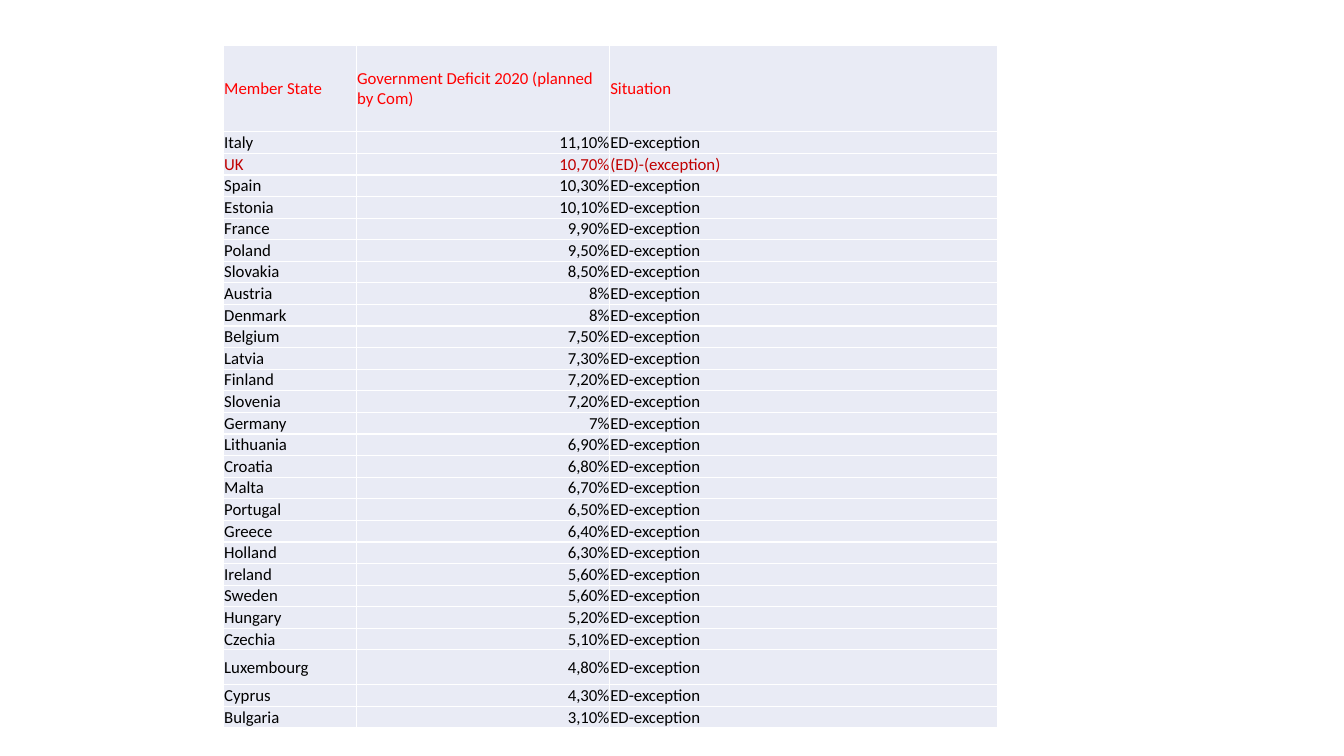
"""Build a slide with a table of planned government deficits in 2020."""
import pptx
import pptx.dml.color
import pptx.enum.text
import pptx.oxml
import pptx.oxml.ns
import pptx.util

Cm = pptx.util.Cm
ALIGN = pptx.enum.text.PP_ALIGN

HEADER = ("Member State", "Government Deficit 2020 (planned by Com)", "Situation")
DEFICITS = [
    ("Italy", "11,10%"), ("UK", "10,70%"), ("Spain", "10,30%"),
    ("Estonia", "10,10%"), ("France", "9,90%"), ("Poland", "9,50%"),
    ("Slovakia", "8,50%"), ("Austria", "8%"), ("Denmark", "8%"),
    ("Belgium", "7,50%"), ("Latvia", "7,30%"), ("Finland", "7,20%"),
    ("Slovenia", "7,20%"), ("Germany", "7%"), ("Lithuania", "6,90%"),
    ("Croatia", "6,80%"), ("Malta", "6,70%"), ("Portugal", "6,50%"),
    ("Greece", "6,40%"), ("Holland", "6,30%"), ("Ireland", "5,60%"),
    ("Sweden", "5,60%"), ("Hungary", "5,20%"), ("Czechia", "5,10%"),
    ("Luxembourg", "4,80%"), ("Cyprus", "4,30%"), ("Bulgaria", "3,10%"),
]
SITUATION = "ED-exception"
OTHER_SITUATIONS = {"UK": "(ED)-(exception)"}
JUSTIFIED = {"Estonia", "France", "Denmark", "Finland", "Germany", "Greece",
             "Ireland", "Hungary"}

COLORS = {"header": "FF0000", "body": "000000", "uk": "C00000",
          "fill": "E9EBF5", "border": "FFFFFF"}
LEFT, TOP, HEIGHT = 5.64, 1.15, 17.22
COL_WIDTHS = (3.35, 6.38, 9.78)
TALL_ROWS = {"Member State": 2.17, "Luxembourg": 0.88}
CELL_FORMAT = {
    "margin_left": Cm(0.01), "margin_right": Cm(0.01),
    "margin_top": Cm(0.01), "margin_bottom": Cm(0),
    "vertical_anchor": pptx.enum.text.MSO_ANCHOR.MIDDLE,
}
FONT_FORMAT = {"name": "Calibri", "size": pptx.util.Pt(12), "bold": False}


def rgb(name):
    return pptx.dml.color.RGBColor.from_string(COLORS[name])


def add_borders(cell):
    tcPr = cell._tc.get_or_add_tcPr()
    for side in ("lnL", "lnR", "lnT", "lnB"):
        tcPr.append(pptx.oxml.parse_xml(
            f'<a:{side} {pptx.oxml.ns.nsdecls("a")} w="{pptx.util.Pt(1)}"><a:solidFill>'
            f'<a:srgbClr val="{COLORS["border"]}"/></a:solidFill></a:{side}>'))


def fill_cell(cell, text, color, align):
    add_borders(cell)
    cell.fill.solid()
    cell.fill.fore_color.rgb = rgb("fill")
    for key, value in CELL_FORMAT.items():
        setattr(cell, key, value)
    p = cell.text_frame.paragraphs[0]
    p.alignment = align
    r = p.add_run()
    r.text = text
    for key, value in FONT_FORMAT.items():
        setattr(r.font, key, value)
    r.font.color.rgb = rgb(color)


def main():
    prs = pptx.Presentation()
    prs.slide_width, prs.slide_height = Cm(33.87), Cm(19.05)
    s = prs.slides.add_slide(prs.slide_layouts[6])

    rows = [HEADER] + [(state, deficit, OTHER_SITUATIONS.get(state, SITUATION))
                       for state, deficit in DEFICITS]
    row_height = (HEIGHT - sum(TALL_ROWS.values())) / (len(rows) - len(TALL_ROWS))
    table = s.shapes.add_table(len(rows), len(HEADER), Cm(LEFT), Cm(TOP),
                               Cm(sum(COL_WIDTHS)), Cm(HEIGHT)).table
    table.first_row = table.horz_banding = False
    for column, width in zip(table.columns, COL_WIDTHS):
        column.width = Cm(width)

    for i, row in enumerate(rows):
        state = row[0]
        table.rows[i].height = Cm(TALL_ROWS.get(state, row_height))
        color = "header" if i == 0 else "uk" if state == "UK" else "body"
        text_align = ALIGN.JUSTIFY if state in JUSTIFIED else ALIGN.LEFT
        for j, text in enumerate(row):
            align = ALIGN.RIGHT if i > 0 and j == 1 else text_align
            fill_cell(table.cell(i, j), text, color, align)

    prs.save("out.pptx")


if __name__ == "__main__":
    main()
